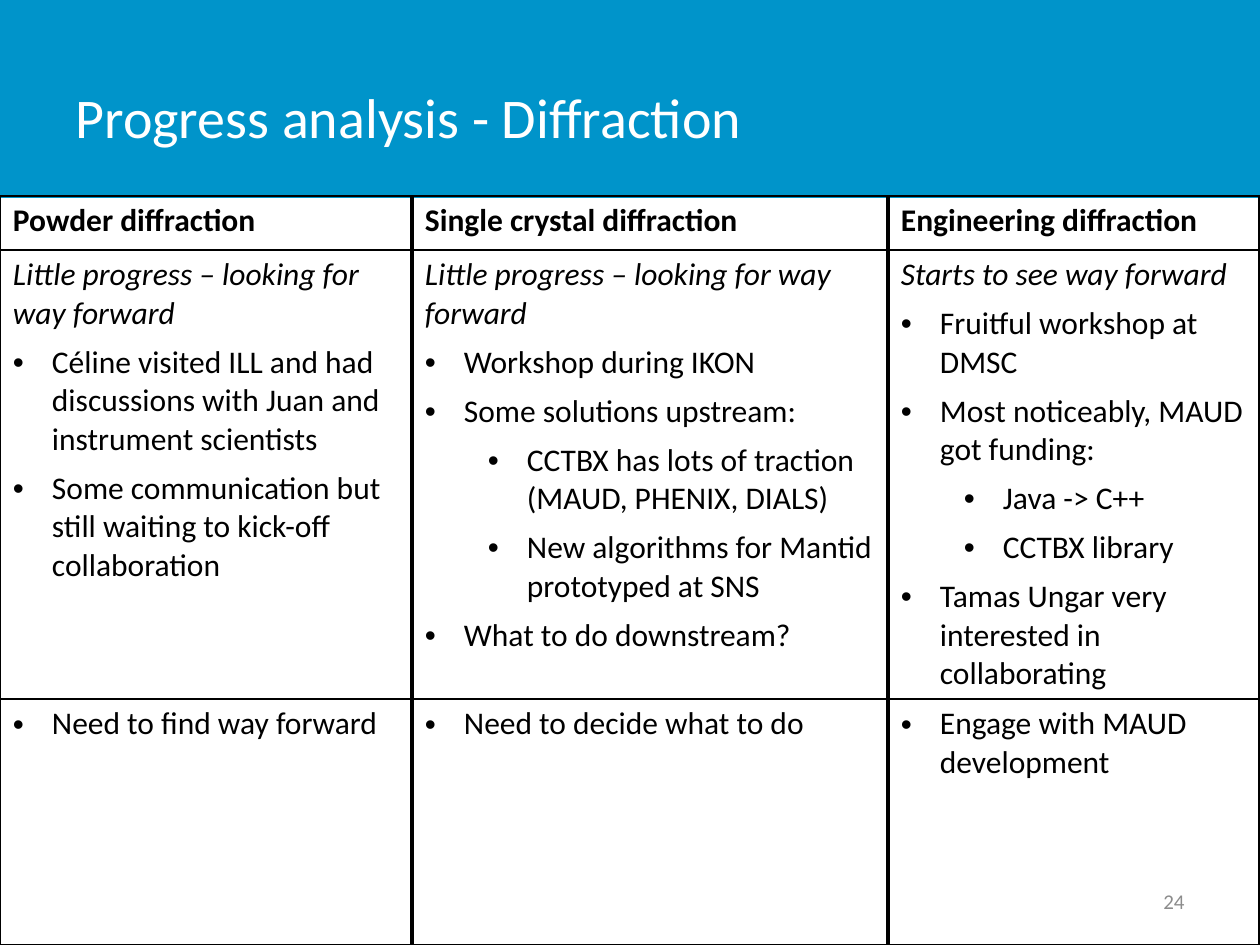
from lxml.etree import SubElement
from pptx import Presentation
from pptx.dml.color import RGBColor
from pptx.enum.shapes import MSO_SHAPE
from pptx.enum.text import MSO_ANCHOR, PP_ALIGN
from pptx.oxml.ns import qn
from pptx.util import Emu, Pt

BLUE = RGBColor(0x00, 0x94, 0xCA)
WHITE = RGBColor(0xFF, 0xFF, 0xFF)
BLACK = RGBColor(0x00, 0x00, 0x00)
GREY = RGBColor(0x8C, 0x8C, 0x8C)
FONT = "Calibri"
EMU_PER_PX = 914400 / 126

COLUMN_WIDTHS = [412, 476, 372]
ROW_HEIGHTS = [54, 449, 246]
BULLET_INDENT = 39
LEVEL_STEP = 63

# Each paragraph is a kind and its text; a number is the level of a bullet.
ROWS = [
    [
        [("heading", "Powder diffraction")],
        [("heading", "Single crystal diffraction")],
        [("heading", "Engineering diffraction")],
    ],
    [
        [
            ("status", "Little progress – looking for way forward"),
            (0, "Céline visited ILL and had discussions with Juan and instrument scientists"),
            (0, "Some communication but still waiting to kick-off collaboration"),
        ],
        [
            ("status", "Little progress – looking for way forward"),
            (0, "Workshop during IKON"),
            (0, "Some solutions upstream:"),
            (1, "CCTBX has lots of traction (MAUD, PHENIX, DIALS)"),
            (1, "New algorithms for Mantid prototyped at SNS"),
            (0, "What to do downstream?"),
        ],
        [
            ("status", "Starts to see way forward"),
            (0, "Fruitful workshop at DMSC"),
            (0, "Most noticeably, MAUD got funding:"),
            (1, "Java -> C++"),
            (1, "CCTBX library"),
            (0, "Tamas Ungar very interested in collaborating"),
        ],
    ],
    [
        [(0, "Need to find way forward")],
        [(0, "Need to decide what to do")],
        [(0, "Engage with MAUD development")],
    ],
]


def px(length):
    return Emu(round(length * EMU_PER_PX))


def add_text(paragraph, text, size, color):
    run = paragraph.add_run()
    run.text = text
    run.font.name = FONT
    run.font.size = Pt(size)
    run.font.color.rgb = color
    return run


presentation = Presentation()
presentation.slide_width = px(1260)
presentation.slide_height = px(945)
slide = presentation.slides.add_slide(presentation.slide_layouts[5])

# Title on its banner
title = slide.shapes.title
title.left, title.top, title.width, title.height = px(63), px(38), px(984), px(157)
title.text_frame.vertical_anchor = MSO_ANCHOR.MIDDLE
title_paragraph = title.text_frame.paragraphs[0]
title_paragraph.alignment = PP_ALIGN.LEFT
add_text(title_paragraph, "Progress analysis - Diffraction", 32, WHITE)

banner = slide.shapes.add_shape(MSO_SHAPE.RECTANGLE, 0, 0, px(1260), px(198))
banner.shadow.inherit = False
banner.fill.solid()
banner.fill.fore_color.rgb = BLUE
banner.line.fill.background()
title.element.addprevious(banner.element)

# Slide number
number_box = slide.shapes.add_textbox(px(903), px(876), px(294), px(50))
number_box.text_frame.word_wrap = True
number_box.text_frame.vertical_anchor = MSO_ANCHOR.MIDDLE
number_paragraph = number_box.text_frame.paragraphs[0]
number_paragraph.alignment = PP_ALIGN.RIGHT
add_text(number_paragraph, "24", 12, GREY)

# Progress table
table = slide.shapes.add_table(
    len(ROW_HEIGHTS), len(COLUMN_WIDTHS),
    0, px(196), px(sum(COLUMN_WIDTHS)), px(sum(ROW_HEIGHTS)),
).table
table.first_row = False
table.horz_banding = False
for column, width in zip(table.columns, COLUMN_WIDTHS):
    column.width = px(width)
for row, height in zip(table.rows, ROW_HEIGHTS):
    row.height = px(height)

for row_index, row_content in enumerate(ROWS):
    for column_index, content in enumerate(row_content):
        cell = table.cell(row_index, column_index)
        cell.margin_left = cell.margin_right = px(13)
        cell.margin_top = cell.margin_bottom = px(6)

        left_width = 1 if column_index == 0 else 2.25
        cell_properties = cell._tc.get_or_add_tcPr()
        for side, width in (("L", left_width), ("R", 2.25), ("T", 1), ("B", 1)):
            border = SubElement(cell_properties, qn(f"a:ln{side}"), w=str(Pt(width)))
            border_fill = SubElement(border, qn("a:solidFill"))
            SubElement(border_fill, qn("a:srgbClr"), val=str(BLACK))
        cell.fill.background()

        text_frame = cell.text_frame
        for index, (kind, text) in enumerate(content):
            paragraph = text_frame.add_paragraph() if index else text_frame.paragraphs[0]
            if kind in (0, 1):
                paragraph.level = kind
                properties = paragraph._p.get_or_add_pPr()
                properties.set("marL", str(px(BULLET_INDENT + kind * LEVEL_STEP)))
                properties.set("indent", str(px(-BULLET_INDENT)))
                SubElement(properties, qn("a:buFont"), typeface="Arial")
                SubElement(properties, qn("a:buChar"), char="•")
            paragraph.space_after = Pt(6)
            run = add_text(paragraph, text, 18, BLACK)
            run.font.bold = kind == "heading"
            run.font.italic = kind == "status"

presentation.save("out.pptx")
